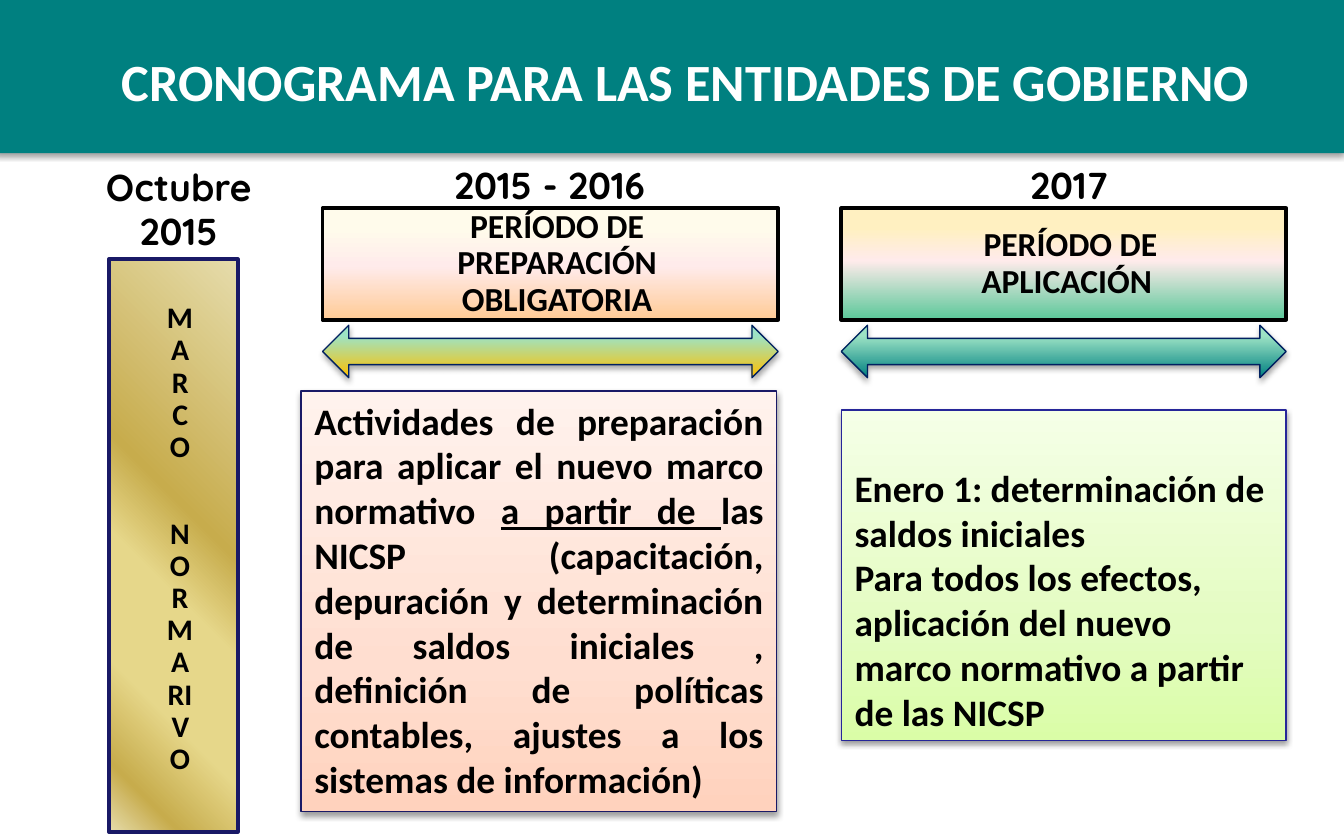
from lxml import etree
from pptx import Presentation
from pptx.dml.color import RGBColor
from pptx.enum import shapes, text
from pptx.oxml import ns
from pptx.util import Inches, Pt

HUES = {"teal": "008080", "white": "FFFFFF", "black": "000000",
        "navy": "191966", "blue": "262699", "deep": "002060"}
FADES = {
    "peach": [(2, "FFCC99"), (48, "FFEBEB"), (82, "FFFBEB")],
    "mint": [(2, "60C99C"), (53, "FFEBEB"), (82, "FFF0C1")],
    "rose": [(0, "FFD2BD"), (35, "FFDED0"), (100, "FFF2ED")],
    "lime": [(0, "DAFDA7"), (35, "E4FCC2"), (100, "F5FFE7")],
    "sea": [(0, "008080"), (80, "9DE3C5"), (100, "9CE6C6")],
    "sun": [(0, "FFC000"), (80, "9DE3C5"), (100, "9CE6C6")],
    "gold": [(0, "E6DCAC"), (43, "C7AC4C"), (57, "E6D78A"),
             (75, "E6D78A"), (90, "C7AC4C"), (100, "E6DCAC")],
}
TITLE = "CRONOGRAMA PARA LAS ENTIDADES DE GOBIERNO"
DATES = [("Octubre 2015", (0.67, 1.17, 1.32, 0.77)),
         ("2015 - 2016", (3.03, 1.16, 2.12, 0.44)),
         ("2017", (7.05, 1.16, 1.81, 0.44))]
STAGES = [
    {"x": 2.4, "w": 3.39, "head": "PERÍODO DE PREPARACIÓN OBLIGATORIA",
     "fade": "peach", "arrow": "sun",
     "box": (2.24, 2.91, 3.54, 3.13), "tint": "rose", "edge": "navy",
     "align": "JUSTIFY", "anchor": "TOP",
     "body": [["Actividades de preparación para aplicar el nuevo marco normativo ",
               "a partir de ",
               "las NICSP (capacitación, depuración y determinación de saldos "
               "iniciales , definición de políticas contables, ajustes a los "
               "sistemas de información)"]]},
    {"x": 6.26, "w": 3.31, "head": "PERÍODO DE APLICACIÓN ",
     "fade": "mint", "arrow": "sea",
     "box": (6.26, 3.05, 3.31, 2.46), "tint": "lime", "edge": "blue",
     "align": "LEFT", "anchor": "BOTTOM",
     "body": [["Enero 1: determinación de saldos iniciales"],
              ["Para todos los efectos, aplicación del nuevo marco normativo "
               "a partir de las NICSP"]]},
]
BAR = [["MARCO"], ["NORMARIVO"]]
SIDES = (0.1, 0.05, 0.1, 0.05)
RECT = shapes.MSO_SHAPE.RECTANGLE
ARROW = shapes.MSO_SHAPE.LEFT_RIGHT_ARROW

deck = Presentation()
deck.slide_width, deck.slide_height = Inches(10), Inches(6.25)
slide = deck.slides.add_slide(deck.slide_layouts[6])


def rgb(name):
    return RGBColor.from_string(HUES[name])


def add(root, tag, **attrs):
    return etree.SubElement(root, ns.qn(tag), attrs)


def shade(shape, fade, angle):
    grad = etree.Element(ns.qn("a:gradFill"), rotWithShape="1")
    stops = add(grad, "a:gsLst")
    for spot, hue in FADES[fade]:
        add(add(stops, "a:gs", pos=str(spot * 1000)), "a:srgbClr", val=hue)
    add(grad, "a:lin", ang=str(angle * 60000), scaled="0")
    shape._element.spPr.insert(2, grad)


def draw(kind, at, fade=None, edge=None, width=0.75, angle=270, glow=0):
    shape = slide.shapes.add_shape(kind, *map(Inches, at))
    if fade:
        shade(shape, fade, angle)
    else:
        shape.fill.solid()
        shape.fill.fore_color.rgb = rgb("teal")
    if edge:
        shape.line.color.rgb = rgb(edge)
        shape.line.width = Pt(width)
    else:
        shape.line.fill.background()
    shape.shadow.inherit = False
    if glow:
        root = shape._element.spPr.find(ns.qn("a:effectLst"))
        cast = add(root, "a:outerShdw", blurRad=str(Pt(3.1)), dist=str(Pt(1.6)),
                   dir="5400000", rotWithShape="0")
        tone = add(cast, "a:srgbClr", val=HUES["black"])
        add(tone, "a:alpha", val=str(glow * 1000))
    return shape


def write(shape, paras, size, font="Calibri", hue="black", align="CENTER",
          anchor="MIDDLE", inset=SIDES, lead=None, gap=0):
    frame = shape.text_frame
    frame.word_wrap = True
    frame.vertical_anchor = getattr(text.MSO_ANCHOR, anchor)
    (frame.margin_left, frame.margin_top,
     frame.margin_right, frame.margin_bottom) = map(Inches, inset)
    for i, runs in enumerate(paras):
        para = frame.paragraphs[0] if i == 0 else frame.add_paragraph()
        para.alignment = getattr(text.PP_ALIGN, align)
        if lead:
            para.line_spacing = lead
        if i:
            para.space_before = Pt(gap)
        para.font.size, para.font.name, para.font.bold = Pt(size), font, True
        para.font.color.rgb = rgb(hue)
        for j, words in enumerate(runs):
            run = para.add_run()
            run.text = words
            if j == 1:
                run.font.underline = True


def label(at, words, size, **style):
    write(slide.shapes.add_textbox(*map(Inches, at)), [[words]], size, **style)


draw(RECT, (-0.04, -0.02, 10.04, 1.16), glow=38)
label((0.32, -0.18, 9.56, 1.18), TITLE, 28, hue="white", anchor="BOTTOM",
      inset=(0.1, 0.05, 0.1, 0.17))
for words, at in DATES:
    label(at, words, 20, font="Quicksand", anchor="TOP")

for s in STAGES:
    head = draw(RECT, (s["x"], 1.55, s["w"], 0.83), s["fade"], "black", 2)
    write(head, [[s["head"]]], 18, inset=(0.62, 0.05, 0.52, 0.05), lead=0.9)
    draw(ARROW, (s["x"], 2.42, s["w"], 0.39), s["arrow"], "deep", glow=35)
    box = draw(RECT, s["box"], s["tint"], s["edge"], glow=38)
    write(box, s["body"], 20, align=s["align"], anchor=s["anchor"])

bar = draw(RECT, (0.81, 1.93, 0.96, 4.26), "gold", "navy", 2, angle=135)
write(bar, BAR, 16, inset=(0.43, 0.05, 0.33, 0.14), lead=0.9, gap=29)

deck.save("out.pptx")
